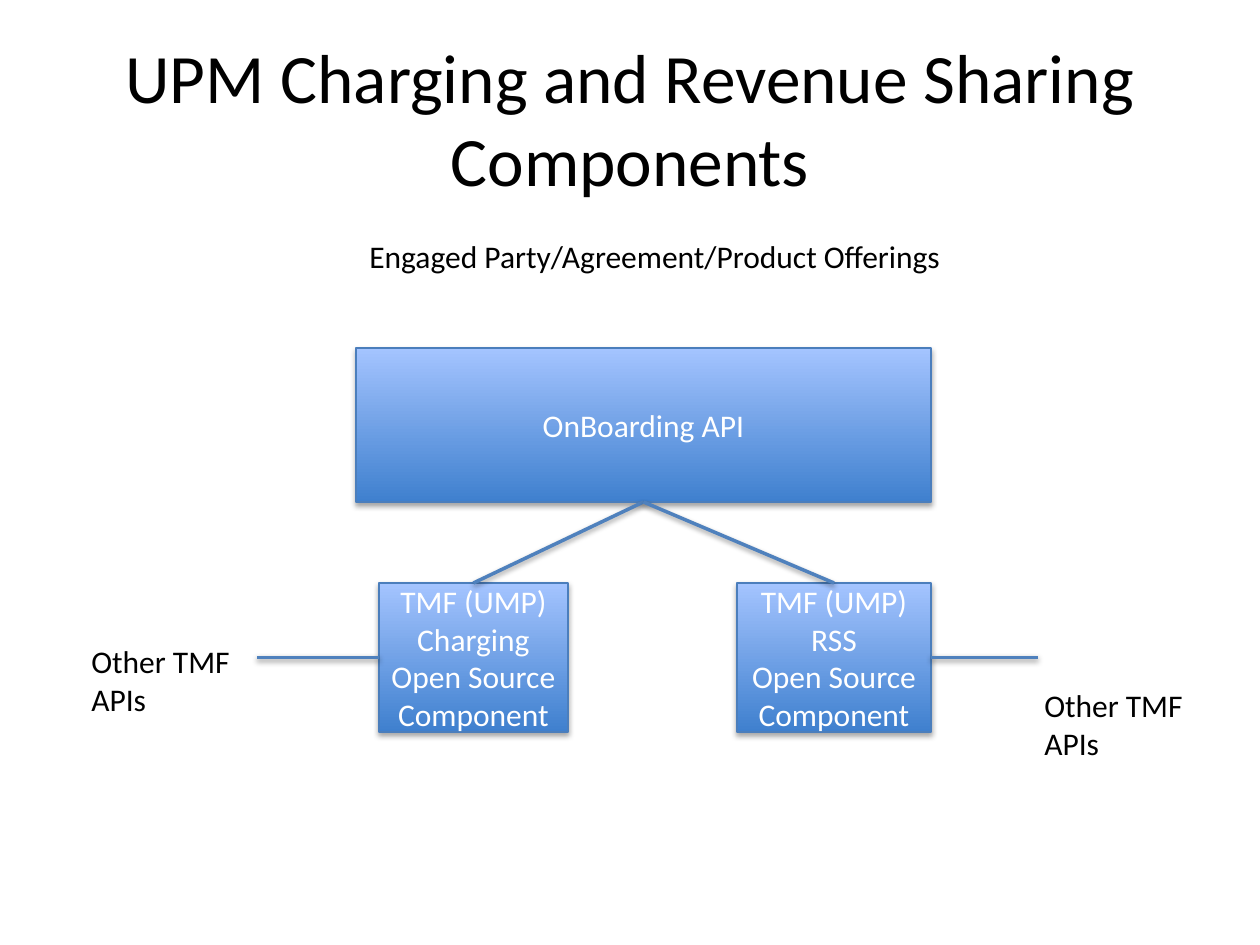
"""Build the charging and revenue sharing components slide."""
from pptx import Presentation, util as u
from pptx.dml.color import RGBColor
from pptx.enum import shapes, text
from pptx.oxml import parse_xml
from pptx.oxml.ns import nsdecls

PX = 914400 // 126
THEME = dict(font="Calibri", ink="000000", pale="FFFFFF", low="3F80CE", high="A4C4FF",
             edge="4B7EBC", link="4F81BD", head=39.6, body=18)
TITLE = ("UPM Charging and Revenue Sharing Components", (63, 38, 1134, 158))
BOXES = {
    "api": ("OnBoarding API", (356, 348, 575, 154)),
    "charge": ("TMF (UMP)\nCharging\nOpen Source\nComponent", (379, 583, 189, 149)),
    "share": ("TMF (UMP)\nRSS\nOpen Source\nComponent", (737, 583, 194, 149)),
}
NOTES = [
    ("Engaged Party/Agreement/Product Offerings", (357, 231, 607, 50)),
    ("Other TMF\nAPIs", (79, 636, 165, 89)),
    ("Other TMF\nAPIs", (1032, 680, 165, 89)),
]
TOP, LEFT, BOTTOM, RIGHT = range(4)
LINKS = [("api", BOTTOM, "charge", TOP), ("api", BOTTOM, "share", TOP)]
STUBS = [("charge", LEFT, 257), ("share", RIGHT, 1038)]


def emu(area):
    return [n * PX for n in area]


def color(key):
    return RGBColor.from_string(THEME[key])


def write(frame, words, size, ink, align):
    frame.text = words
    for para in frame.paragraphs:
        para.alignment = align
        for run in para.runs:
            run.font.name = THEME["font"]
            run.font.size = u.Pt(THEME[size])
            run.font.color.rgb = color(ink)


def shade(item, dist, alpha):
    props = item._element.spPr
    for old in props.findall("{*}effectLst"):
        props.remove(old)
    props.append(parse_xml(
        f'<a:effectLst {nsdecls("a")}><a:outerShdw blurRad="40000" dist="{dist}" '
        f'dir="5400000" rotWithShape="0"><a:srgbClr val="000000">'
        f'<a:alpha val="{alpha}000"/></a:srgbClr></a:outerShdw></a:effectLst>'))


def add_box(slide, words, area):
    box = slide.shapes.add_shape(shapes.MSO_SHAPE.RECTANGLE, *emu(area))
    box.fill.gradient()
    box.fill.gradient_angle = 90
    for stop, key in zip(box.fill.gradient_stops, ("low", "high")):
        stop.color.rgb = color(key)
    box.line.color.rgb = color("edge")
    box.line.width = u.Pt(0.75)
    shade(box, 23000, 35)
    box.text_frame.vertical_anchor = text.MSO_ANCHOR.MIDDLE
    write(box.text_frame, words, "body", "pale", text.PP_ALIGN.CENTER)
    return box


def add_note(slide, words, area):
    frame = slide.shapes.add_textbox(*emu(area)).text_frame
    frame.word_wrap = False
    frame.auto_size = text.MSO_AUTO_SIZE.SHAPE_TO_FIT_TEXT
    write(frame, words, "body", "ink", text.PP_ALIGN.LEFT)


def add_link(slide, start, site):
    link = slide.shapes.add_connector(shapes.MSO_CONNECTOR.STRAIGHT, 0, 0, 0, 0)
    link.begin_connect(start, site)
    link.line.color.rgb = color("link")
    link.line.width = u.Pt(2)
    shade(link, 20000, 38)
    return link


def main():
    deck = Presentation()
    deck.slide_width, deck.slide_height = u.Inches(10), u.Inches(7.5)
    slide = deck.slides.add_slide(deck.slide_layouts[5])
    title = slide.shapes.title
    words, area = TITLE
    title.left, title.top, title.width, title.height = emu(area)
    title.text_frame.vertical_anchor = text.MSO_ANCHOR.MIDDLE
    write(title.text_frame, words, "head", "ink", text.PP_ALIGN.CENTER)
    boxes = {key: add_box(slide, *row) for key, row in BOXES.items()}
    for start, site, end, goal in LINKS:
        add_link(slide, boxes[start], site).end_connect(boxes[end], goal)
    for start, site, x in STUBS:
        stub = add_link(slide, boxes[start], site)
        stub.end_x, stub.end_y = x * PX, stub.begin_y
    for row in NOTES:
        add_note(slide, *row)
    deck.save("out.pptx")


if __name__ == "__main__":
    main()
